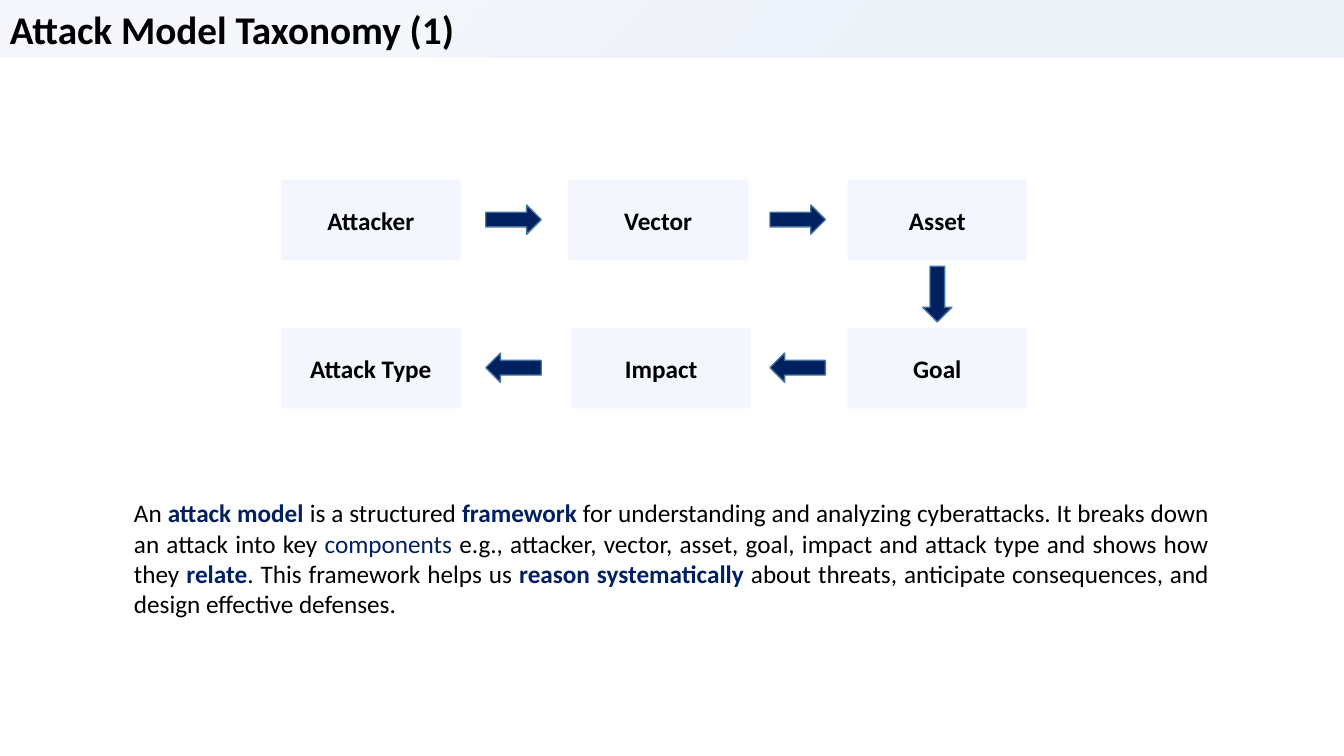
from lxml import etree
from pptx import Presentation
from pptx.dml.color import RGBColor
from pptx.enum.shapes import MSO_SHAPE
from pptx.enum.text import MSO_ANCHOR, PP_ALIGN
from pptx.oxml import parse_xml
from pptx.util import Pt

FONT = "Calibri"
BLACK = RGBColor(0x00, 0x00, 0x00)
NAVY = RGBColor(0x00, 0x20, 0x60)
STEEL = RGBColor(0x43, 0x73, 0x9E)
PALE_BLUE = RGBColor(0xF3, 0xF6, 0xFC)
HEADER_BLUE = RGBColor(0x44, 0x72, 0xC4)

BOX_SIZE = (128.2, 57.6)
ARROW_SIZE = (39.6, 20.9)
ROW_PITCH = 105.8
# Each step: label, offset from the diagram's left edge, row
STEPS = [
    ("Attacker", 0, 0), ("Vector", 205.2, 0), ("Asset", 404.6, 0),
    ("Goal", 404.6, 1), ("Impact", 207.4, 1), ("Attack Type", 0, 1),
]
ARROW_OFFSETS = (146.2, 349.2)
# Each piece: text, highlighted, bold
DEFINITION = [
    ("An ", False, False),
    ("attack model ", True, True),
    ("is a structured ", False, False),
    ("framework", True, True),
    (" for understanding and analyzing cyberattacks. It breaks down an attack "
     "into key ", False, False),
    ("components ", True, False),
    ("e.g., attacker, vector, asset, goal, impact and attack type and shows "
     "how they ", False, False),
    ("relate", True, True),
    (". This framework helps us ", False, False),
    ("reason systematically ", True, True),
    ("about threats, anticipate consequences, and design effective defenses.",
     False, False),
]


def add_shape(slide, kind, left, top, width, height):
    shape = slide.shapes.add_shape(kind, Pt(left), Pt(top), Pt(width), Pt(height))
    shape.shadow.inherit = False
    shape.line.fill.background()
    return shape


def write_label(shape, text, size, alignment, anchor):
    shape.text_frame.vertical_anchor = anchor
    paragraph = shape.text_frame.paragraphs[0]
    paragraph.text = text
    paragraph.alignment = alignment
    paragraph.font.name = FONT
    paragraph.font.size = Pt(size)
    paragraph.font.bold = True
    paragraph.font.color.rgb = BLACK


def set_corner_gradient(shape, color, stops):
    """Fill with a translucent gradient spreading from the bottom right corner."""
    shape.fill.gradient()
    gradient = shape._element.spPr.find("{*}gradFill")
    namespace = etree.QName(gradient).namespace
    stop_xml = "".join(
        f'<a:gs pos="{position * 1000}"><a:srgbClr val="{color}">'
        f'<a:alpha val="{alpha * 1000}"/></a:srgbClr></a:gs>'
        for position, alpha in stops)
    replacement = parse_xml(
        f'<a:gradFill xmlns:a="{namespace}" rotWithShape="1">'
        f'<a:gsLst>{stop_xml}</a:gsLst>'
        '<a:path path="circle"><a:fillToRect l="100000" t="100000"/></a:path>'
        '</a:gradFill>')
    gradient.getparent().replace(gradient, replacement)


def add_header(slide, left, top, width, height):
    band = add_shape(slide, MSO_SHAPE.RECTANGLE, left, top, width, height)
    set_corner_gradient(band, HEADER_BLUE, [(26, 10), (76, 5)])
    write_label(band, "Attack Model Taxonomy (1)", 28, PP_ALIGN.LEFT, MSO_ANCHOR.TOP)


def add_arrow(slide, left, top, rotation):
    arrow = add_shape(slide, MSO_SHAPE.RIGHT_ARROW, left, top, *ARROW_SIZE)
    arrow.rotation = rotation
    arrow.fill.solid()
    arrow.fill.fore_color.rgb = NAVY
    arrow.line.color.rgb = STEEL
    arrow.line.width = Pt(1)


def add_attack_flow(slide, left, top):
    # Step boxes
    for label, offset, row in STEPS:
        box = add_shape(slide, MSO_SHAPE.RECTANGLE, left + offset,
                        top + row * ROW_PITCH, *BOX_SIZE)
        box.fill.solid()
        box.fill.fore_color.rgb = PALE_BLUE
        write_label(box, label, 18, PP_ALIGN.CENTER, MSO_ANCHOR.MIDDLE)

    # Arrows: rightwards on the first row, leftwards on the second
    for row, rotation in enumerate((0, 180)):
        for offset in ARROW_OFFSETS:
            add_arrow(slide, left + offset, top + row * ROW_PITCH + 18, rotation)

    # Turn from the first row down to the second
    last_column = STEPS[2][1]
    add_arrow(slide, left + last_column + (BOX_SIZE[0] - ARROW_SIZE[0]) / 2,
              top + (ROW_PITCH + BOX_SIZE[1] - ARROW_SIZE[1]) / 2, 90)


def add_definition(slide, left, top, width, height):
    text_box = slide.shapes.add_textbox(Pt(left), Pt(top), Pt(width), Pt(height))
    text_box.text_frame.word_wrap = True
    paragraph = text_box.text_frame.paragraphs[0]
    paragraph.alignment = PP_ALIGN.JUSTIFY
    paragraph.font.name = FONT
    paragraph.font.size = Pt(18)
    for text, highlighted, bold in DEFINITION:
        run = paragraph.add_run()
        run.text = text
        run.font.name = FONT
        run.font.size = Pt(18)
        run.font.bold = bold
        run.font.color.rgb = NAVY if highlighted else BLACK


def main():
    presentation = Presentation()
    presentation.slide_width = Pt(960)
    presentation.slide_height = Pt(540)
    slide = presentation.slides.add_slide(presentation.slide_layouts[6])
    add_header(slide, 0, 0, 960, 41.2)
    add_attack_flow(slide, 200.8, 128.4)
    add_definition(slide, 88.6, 352, 782, 94.3)
    presentation.save("out.pptx")


if __name__ == "__main__":
    main()
